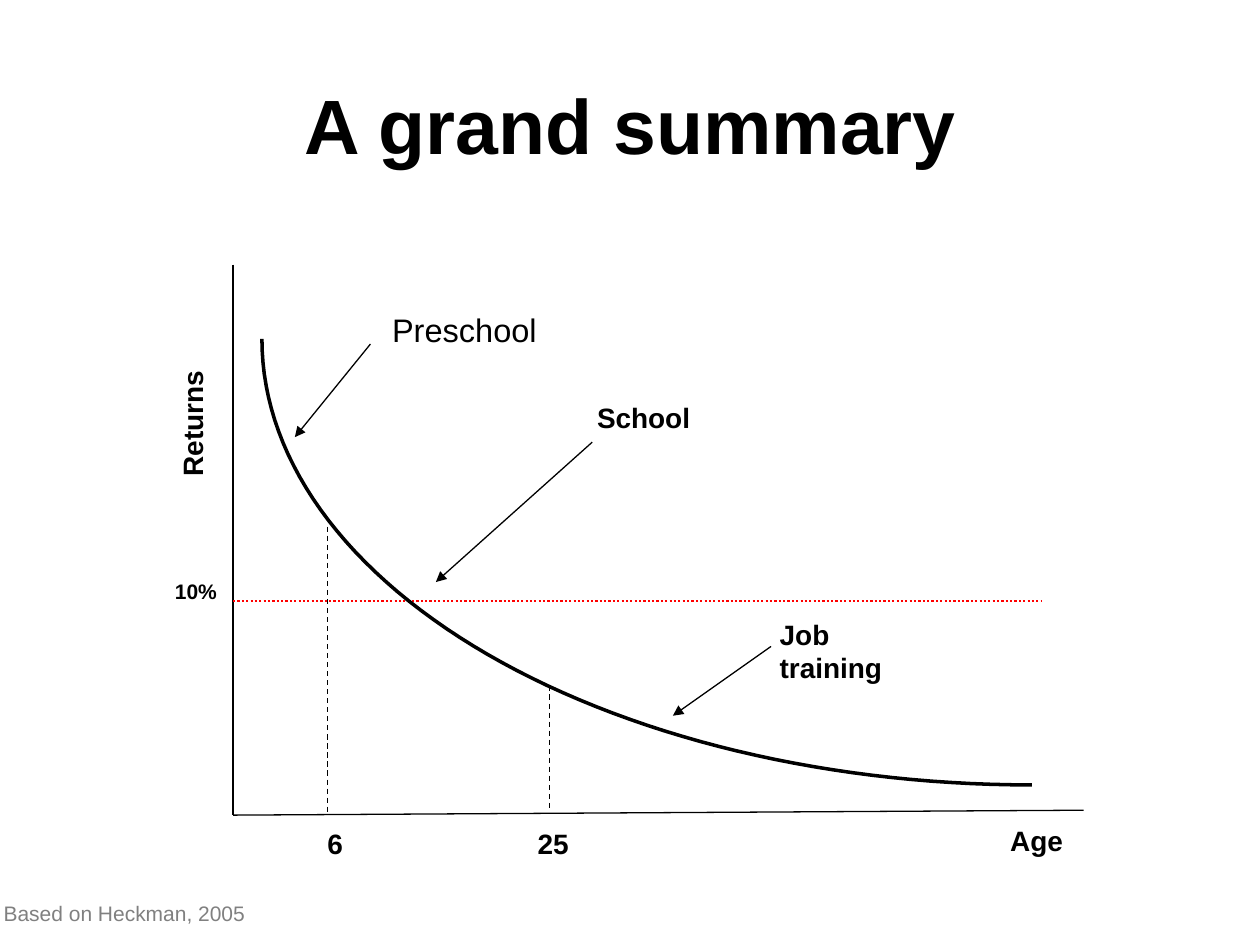
from math import cos, pi, sin

from lxml.etree import SubElement
from pptx import Presentation
from pptx.dml.color import RGBColor
from pptx.enum.dml import MSO_LINE
from pptx.enum.shapes import MSO_CONNECTOR
from pptx.enum.text import MSO_ANCHOR, MSO_AUTO_SIZE, PP_ALIGN
from pptx.oxml.ns import qn
from pptx.util import Pt

BLACK = RGBColor(0, 0, 0)
RED = RGBColor(255, 0, 0)
GRAY = RGBColor(128, 128, 128)


def place(box, left, top, width, height):
    box.left, box.top = Pt(left), Pt(top)
    box.width, box.height = Pt(width), Pt(height)


def write(box, text, size, bold, color=BLACK):
    box.text_frame.text = text
    paragraph = box.text_frame.paragraphs[0]
    font = paragraph.runs[0].font
    font.name, font.size, font.bold = "Arial", Pt(size), bold
    font.color.rgb = color
    return paragraph


deck = Presentation()
deck.slide_width, deck.slide_height = Pt(720), Pt(540)
page = deck.slides.add_slide(deck.slide_layouts[1])

title = page.shapes.title
place(title, 23, 46.8, 674.6, 48.2)
title.text_frame.vertical_anchor = MSO_ANCHOR.MIDDLE
title.text_frame.auto_size = MSO_AUTO_SIZE.NONE
write(title, "A grand summary", 44, True).alignment = PP_ALIGN.CENTER

body = page.placeholders[1]
place(body, 149.8, 173.5, 202.3, 25.9)
body.text_frame.auto_size = MSO_AUTO_SIZE.NONE
preschool = write(body, "Preschool", 18.6, False)
preschool.level = 2
preschool.space_before = Pt(3.7)
properties = preschool._p.get_or_add_pPr()
properties.set("marL", str(Pt(85)))
properties.set("indent", str(Pt(-18)))
SubElement(properties, qn("a:buNone"))

axis_x, axis_y = 133.2, 465.8
lines = [
    (axis_x, 151.2, axis_x, axis_y, BLACK, 0.75, None, False),
    (axis_x, axis_y, 619.2, 463, BLACK, 0.75, None, False),
    (axis_x, 343.4, 594.7, 343.4, RED, 1.25, MSO_LINE.ROUND_DOT, False),
    (187.2, 301, 187.2, axis_y, BLACK, 0.75, MSO_LINE.DASH, False),
    (313.9, 391.7, 313.9, 463, BLACK, 0.75, MSO_LINE.DASH, False),
    (211.7, 196.6, 168.5, 249.8, BLACK, 0.75, None, True),
    (338.4, 252.7, 249.1, 332.6, BLACK, 0.75, None, True),
    (440.6, 369.4, 384.5, 409, BLACK, 0.75, None, True),
]
for x1, y1, x2, y2, color, width, dash, arrow in lines:
    connector = page.shapes.add_connector(
        MSO_CONNECTOR.STRAIGHT, Pt(x1), Pt(y1), Pt(x2), Pt(y2))
    connector.line.color.rgb = color
    connector.line.width = Pt(width)
    if dash:
        connector.line.dash_style = dash
    if arrow:
        SubElement(connector.line._get_or_add_ln(), qn("a:tailEnd"), type="triangle")
    SubElement(connector._element.spPr, qn("a:effectLst"))

center_x, center_y, radius_x, radius_y = 589.7, 193.7, 440, 254.9
steps = 60
angles = [pi / 2 * step / steps for step in range(steps + 1)]
points = [(Pt(center_x - radius_x * cos(angle)), Pt(center_y + radius_y * sin(angle)))
          for angle in angles]
builder = page.shapes.build_freeform(*points[0])
builder.add_line_segments(points[1:], close=False)
curve = builder.convert_to_shape()
curve.shadow.inherit = False
curve.fill.background()
curve.line.color.rgb = BLACK
curve.line.width = Pt(2)

labels = [
    ("Returns", 72, 228.2, 75.6, 26.6, 16, True, BLACK, False, 270),
    ("10%", 92.9, 326.9, 38.9, 21.6, 12, True, BLACK, False, 0),
    ("Age", 570.2, 467.3, 44.6, 26.6, 16, True, BLACK, False, 0),
    ("School", 334.1, 225.4, 68.4, 26.6, 16, True, BLACK, False, 0),
    ("Job training", 438.5, 349.2, 105.1, 46.1, 16, True, BLACK, True, 0),
    ("6", 180, 468.7, 23.8, 26.6, 16, True, BLACK, False, 0),
    ("25", 300.2, 468.7, 38.2, 26.6, 16, True, BLACK, True, 0),
    ("Based on Heckman, 2005", -5.8, 511.9, 674.6, 20.9, 12, False, GRAY, True, 0),
]
for text, left, top, width, height, size, bold, color, wrap, rotation in labels:
    box = page.shapes.add_textbox(Pt(left), Pt(top), Pt(width), Pt(height))
    box.rotation = rotation
    box.text_frame.word_wrap = wrap
    box.text_frame.auto_size = MSO_AUTO_SIZE.SHAPE_TO_FIT_TEXT
    label = write(box, text, size, bold, color)
    if color == GRAY:
        label.line_spacing = 0.95
        box.text_frame.margin_left = box.text_frame.margin_right = Pt(7.9)

deck.save("out.pptx")
